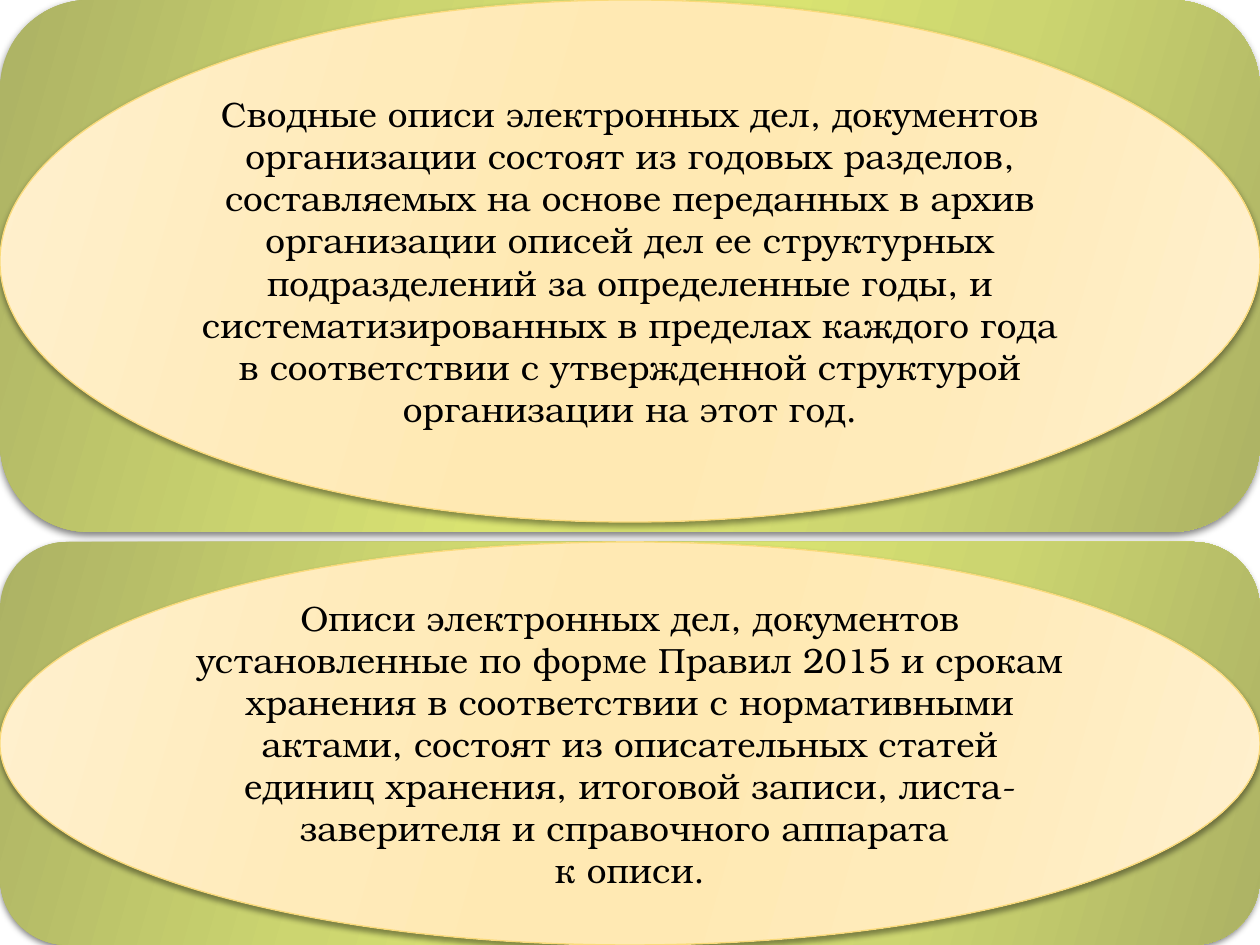
from lxml import etree
from pptx import Presentation
from pptx.dml.color import RGBColor
from pptx.enum.shapes import MSO_SHAPE
from pptx.enum.text import MSO_ANCHOR, PP_ALIGN
from pptx.oxml.ns import qn
from pptx.util import Pt

ROUNDED, OVAL = MSO_SHAPE.ROUNDED_RECTANGLE, MSO_SHAPE.OVAL
MIDDLE, CENTER = MSO_ANCHOR.MIDDLE, PP_ALIGN.CENTER

PX = 914400 // 126
WIDTH, HEIGHT = 1260, 945
FONT = "TeX Gyre Bonum"
BLACK = RGBColor(0x00, 0x00, 0x00)
GOLD = RGBColor(0xFA, 0xDA, 0x7A)
GREENS = [RGBColor(0xAC, 0xB2, 0x64), RGBColor(0xCC, 0xD5, 0x70), RGBColor(0xD9, 0xE3, 0x71)]
CREAMS = [RGBColor(0xFF, 0xF0, 0xCF), RGBColor(0xFF, 0xEB, 0xBA), RGBColor(0xFF, 0xE9, 0xB3)]
STOPS = (0, 30, 45, 55, 73, 100)
ANGLE = 16

PANELS = [
    {"top": 0, "panel_height": 532, "oval_height": 522, "text": [
        "Сводные описи электронных дел, документов организации состоят из годовых разделов, "
        "составляемых на основе переданных в архив организации описей дел ее структурных "
        "подразделений за определенные годы, и систематизированных в пределах каждого года "
        "в соответствии с утвержденной структурой организации на этот год."]},
    {"top": 542, "panel_height": 403, "oval_height": 403, "text": [
        "Описи электронных дел, документов установленные по форме Правил 2015 и срокам "
        "хранения в соответствии с нормативными актами, состоят из описательных статей "
        "единиц хранения, итоговой записи, листа-заверителя и справочного аппарата ",
        "к описи."]},
]


def add_element(parent, tag, **attributes):
    return etree.SubElement(parent, qn(tag), {key: str(value) for key, value in attributes.items()})


def set_gradient(shape, colors):
    properties = shape._element.spPr
    gradient = add_element(properties, "a:gradFill", rotWithShape=1)
    stop_list = add_element(gradient, "a:gsLst")
    for position, color in zip(STOPS, colors + colors[::-1]):
        stop = add_element(stop_list, "a:gs", pos=position * 1000)
        add_element(stop, "a:srgbClr", val=color)
    add_element(gradient, "a:lin", ang=ANGLE * 60000, scaled=0)
    properties.find(qn("a:prstGeom")).addnext(gradient)


def set_shadow(shape, opacity, blur):
    shape.shadow.inherit = False
    effects = shape._element.spPr.find(qn("a:effectLst"))
    shadow = add_element(effects, "a:outerShdw", blurRad=Pt(blur), dist=Pt(2),
                         dir=90 * 60000, rotWithShape=0)
    color = add_element(shadow, "a:srgbClr", val=BLACK)
    add_element(color, "a:alpha", val=opacity * 1000)


def add_backdrop(slide, kind, top, height, colors, opacity, blur):
    shape = slide.shapes.add_shape(kind, 0, top * PX, WIDTH * PX, height * PX)
    set_gradient(shape, colors)
    set_shadow(shape, opacity, blur)
    return shape


def write_text(shape, lines):
    frame = shape.text_frame
    frame.word_wrap = True
    frame.vertical_anchor = MIDDLE
    frame.text = "\n".join(lines)
    for paragraph in frame.paragraphs:
        paragraph.alignment = CENTER
        paragraph.font.name = FONT
        paragraph.font.size = Pt(20)
        paragraph.font.color.rgb = BLACK


def main():
    presentation = Presentation()
    presentation.slide_width, presentation.slide_height = WIDTH * PX, HEIGHT * PX
    slide = presentation.slides.add_slide(presentation.slide_layouts[6])
    for panel in PANELS:
        shape = add_backdrop(slide, ROUNDED, panel["top"], panel["panel_height"], GREENS, 50, 4)
        shape.line.fill.background()
    for panel in PANELS:
        oval = add_backdrop(slide, OVAL, panel["top"], panel["oval_height"], CREAMS, 40, 3)
        oval.line.color.rgb = GOLD
        oval.line.width = Pt(0.75)
        write_text(oval, panel["text"])
    presentation.save("out.pptx")


if __name__ == "__main__":
    main()
